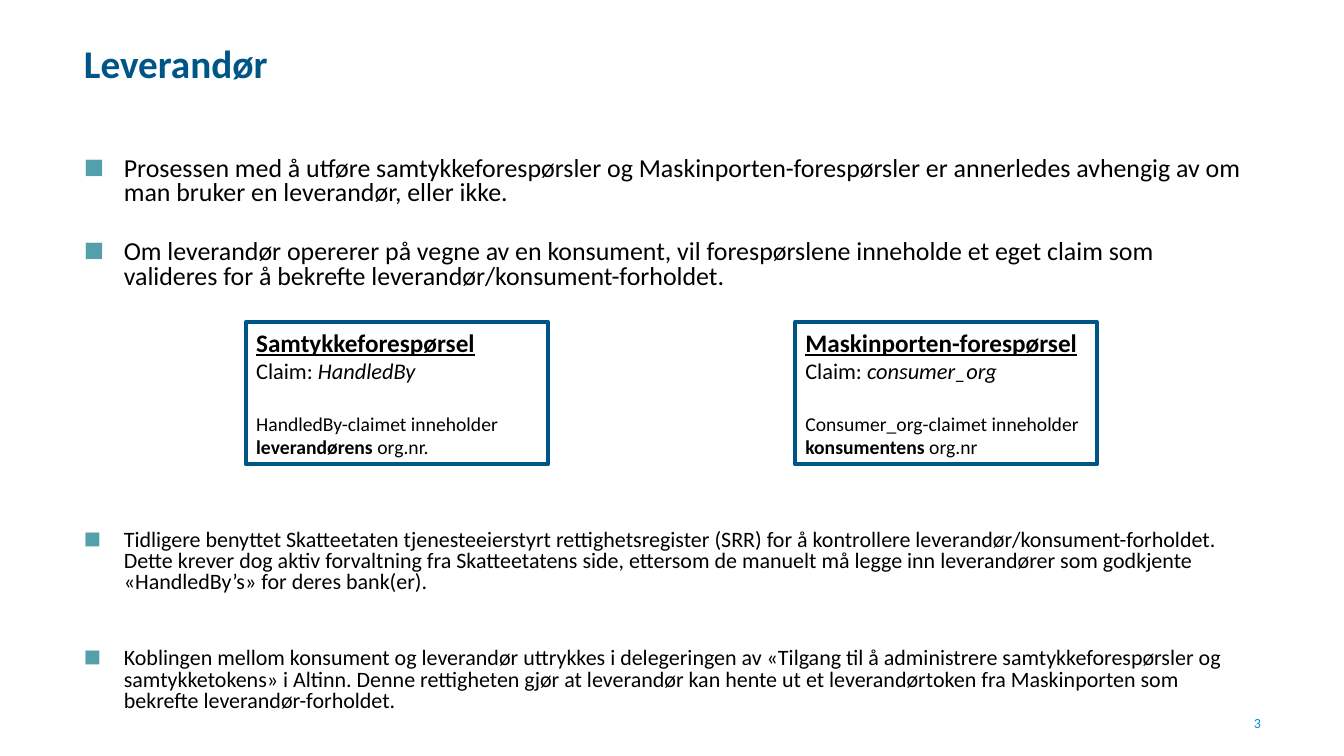
from lxml import etree
from pptx import Presentation
from pptx.dml.color import RGBColor
from pptx.enum.shapes import MSO_SHAPE
from pptx.enum.text import MSO_ANCHOR, PP_ALIGN
from pptx.oxml.ns import qn
from pptx.util import Pt

PX = 9525
FONT = "Calibri"
RECT = MSO_SHAPE.RECTANGLE
TOP, MIDDLE = MSO_ANCHOR.TOP, MSO_ANCHOR.MIDDLE
LEFT, RIGHT = PP_ALIGN.LEFT, PP_ALIGN.RIGHT
COLORS = {"navy": "005587", "blue": "008FD6", "teal": "53A0AB", "black": "000000"}

BULLETS = [
    ("Prosessen med å utføre samtykkeforespørsler og Maskinporten-forespørsler er "
     "annerledes avhengig av om man bruker en leverandør, eller ikke.", 18.5, 0),
    ("Om leverandør opererer på vegne av en konsument, vil forespørslene inneholde et "
     "eget claim som valideres for å bekrefte leverandør/konsument-forholdet.", 18.5, 24),
    ("Tidligere benyttet Skatteetaten tjenesteeierstyrt rettighetsregister (SRR) for å "
     "kontrollere leverandør/konsument-forholdet. Dette krever dog aktiv forvaltning fra "
     "Skatteetatens side, ettersom de manuelt må legge inn leverandører som godkjente "
     "«HandledBy’s» for deres bank(er).", 15.7, 171.5),
    ("Koblingen mellom konsument og leverandør uttrykkes i delegeringen av «Tilgang til å "
     "administrere samtykkeforespørsler og samtykketokens» i Altinn. Denne rettigheten gjør "
     "at leverandør kan hente ut et leverandørtoken fra Maskinporten som bekrefte "
     "leverandør-forholdet.", 15.7, 39.5),
]
CLAIMS = [
    (234, "Samtykkeforespørsel", "HandledBy",
     "HandledBy-claimet inneholder ", "leverandørens", " org.nr."),
    (757, "Maskinporten-forespørsel", "consumer_org",
     "Consumer_org-claimet inneholder ", "konsumentens", " org.nr"),
]


def px(*values):
    return [v * PX for v in values]


def rgb(name):
    return RGBColor.from_string(COLORS[name])


def set_attrs(obj, values):
    for name, value in values.items():
        setattr(obj, name, value)


def set_frame(sp, left, right, anchor=TOP):
    tf = sp.text_frame
    set_attrs(tf, {"word_wrap": True, "vertical_anchor": anchor,
                   "margin_left": left * PX, "margin_right": right * PX})
    return tf


def add_box(s, box, left, right, anchor=TOP):
    return set_frame(s.shapes.add_textbox(*px(*box)), left, right, anchor)


def add_para(tf, runs, color="black", **formats):
    p = tf.paragraphs[0]
    if p.runs:
        p = tf.add_paragraph()
    set_attrs(p, formats)
    for text, size, style in runs:
        r = p.add_run()
        r.text = text
        set_attrs(r.font, {"name": FONT, "size": Pt(size), **style})
        r.font.color.rgb = rgb(color)
    return p


def add_bullet(p):
    pPr = p._p.get_or_add_pPr()
    indent = 38 * PX
    pPr.set("marL", str(indent))
    pPr.set("indent", str(-indent))
    clr = etree.SubElement(pPr, qn("a:buClr"))
    etree.SubElement(clr, qn("a:srgbClr"), val=COLORS["teal"])
    etree.SubElement(pPr, qn("a:buSzPct"), val="130000")
    etree.SubElement(pPr, qn("a:buFont"), typeface="Arial")
    etree.SubElement(pPr, qn("a:buChar"), char="■")


def add_body(s):
    tf = add_box(s, (80, 145, 1121, 575), 0, 10)
    for text, size, gap in BULLETS:
        p = add_para(tf, [(text, size, {})], line_spacing=0.8, space_before=Pt(gap))
        add_bullet(p)


def add_claim(s, x, heading, claim, intro, party, ending):
    sp = s.shapes.add_shape(RECT, *px(x, 307, 288, 135))
    sp.shadow.inherit = False
    sp.fill.background()
    sp.line.color.rgb = rgb("navy")
    sp.line.width = Pt(3)
    etree.SubElement(sp.line._get_or_add_ln(), qn("a:round"))
    tf = set_frame(sp, 10, 10)
    add_para(tf, [(heading, 18, {"bold": True, "underline": True})], alignment=LEFT)
    add_para(tf, [("Claim: ", 16, {}), (claim, 16, {"italic": True})], alignment=LEFT)
    add_para(tf, [(intro, 14, {}), (party, 14, {"bold": True}), (ending, 14, {})],
             alignment=LEFT, space_before=Pt(19.5))


def main():
    prs = Presentation()
    prs.slide_width, prs.slide_height = px(1280, 720)
    s = prs.slides.add_slide(prs.slide_layouts[6])
    number = add_box(s, (1155, 676, 46, 26), 10, 0)
    add_para(number, [("3", 10, {})], "blue", alignment=RIGHT)
    title = add_box(s, (80, 31, 960, 63), 0, 10, MIDDLE)
    add_para(title, [("Leverandør", 28, {"bold": True})], "navy", line_spacing=0.9)
    add_body(s)
    for claim in CLAIMS:
        add_claim(s, *claim)
    prs.save("out.pptx")


if __name__ == "__main__":
    main()
